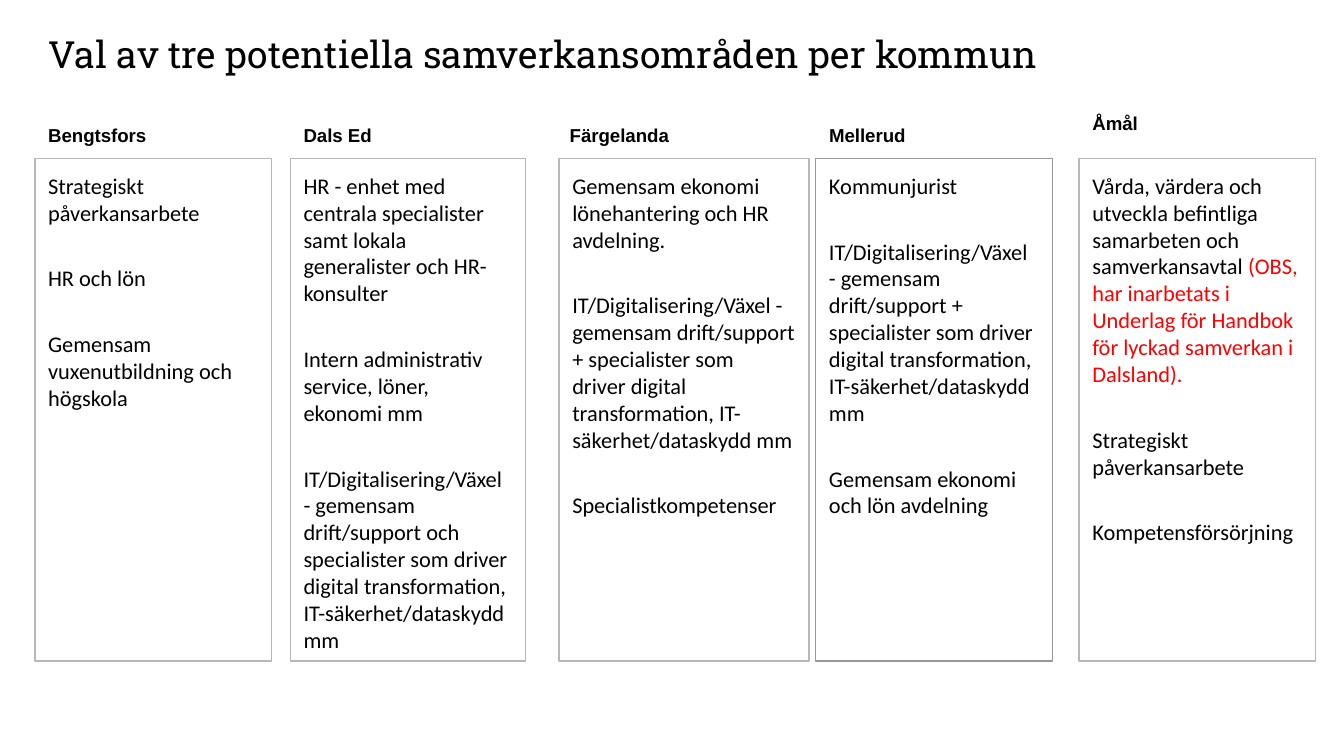
from pptx import Presentation
from pptx.dml.color import RGBColor as RGB
from pptx.enum.shapes import MSO_SHAPE as Shape
from pptx.enum.text import MSO_ANCHOR as Anchor, PP_ALIGN as Align
from pptx.util import Inches, Pt

# Content: a list of paragraphs per municipality; "\n" is a line break,
# and a tuple is (plain text, highlighted text)
TITLE = "Val av tre potentiella samverkansområden per kommun"
IT_SUPPORT = "IT/Digitalisering/Växel - gemensam drift/support "
IT_DRIVER = "digital transformation, IT-säkerhet/dataskydd mm"
COLUMNS = [
    dict(name="Bengtsfors", left=0.26, items=[
        "Strategiskt påverkansarbete",
        "HR och lön",
        "Gemensam vuxenutbildning och högskola"]),
    dict(name="Dals Ed", left=2.16, width=1.75, items=[
        "HR - enhet med centrala specialister samt lokala generalister och HR-konsulter",
        "Intern administrativ service, löner, ekonomi mm",
        IT_SUPPORT + "och specialister som driver " + IT_DRIVER]),
    dict(name="Färgelanda", left=4.16, width=1.86, head_left=4.14, items=[
        "Gemensam ekonomi lönehantering och HR avdelning.",
        IT_SUPPORT + "+ specialister som\ndriver " + IT_DRIVER,
        "Specialistkompetenser"]),
    dict(name="Mellerud", left=6.07, line="rule_dark", items=[
        "Kommunjurist",
        IT_SUPPORT + "+ specialister som driver " + IT_DRIVER,
        "Gemensam ekonomi och lön avdelning"]),
    dict(name="Åmål", left=8.03, head_top=0.75, items=[
        ("Vårda, värdera och utveckla befintliga samarbeten och samverkansavtal ",
         "(OBS, har inarbetats i Underlag för Handbok för lyckad samverkan i Dalsland)."),
        "Strategiskt påverkansarbete",
        "Kompetensförsörjning"]),
]

THEME = dict(
    text=RGB(0x00, 0x00, 0x00), accent=RGB(0xFF, 0x00, 0x00),
    rule=RGB(0xB7, 0xB7, 0xB7), rule_dark=RGB(0x99, 0x99, 0x99),
    title=dict(name="Roboto Slab", size=Pt(20), bold=False),
    heading=dict(name="Arial", size=Pt(10), bold=True),
    body=dict(name="Calibri", size=Pt(12), bold=False),
    item_gap=Pt(20.8), rule_width=Pt(0.75),
)
INSET = 0.1
BOX_TOP, BOX_WIDTH, BOX_HEIGHT = 1.18, 1.76, 3.74
HEAD_TOP, HEAD_WIDTH, HEAD_HEIGHT, HEAD_INSET = 0.84, 1.95, 0.4, 0.12


def set_frame(tf, anchor=Anchor.TOP, inset_y=INSET):
    frame = dict(word_wrap=True, vertical_anchor=anchor,
                 margin_left=Inches(INSET), margin_right=Inches(INSET),
                 margin_top=Inches(inset_y), margin_bottom=Inches(inset_y))
    for key, value in frame.items():
        setattr(tf, key, value)


def add_run(p, text, style, color="text"):
    for i, line in enumerate(text.split("\n")):
        if i:
            p.add_line_break()
        r = p.add_run()
        r.text = line
        for key, value in THEME[style].items():
            setattr(r.font, key, value)
        r.font.color.rgb = THEME[color]


def add_label(s, text, style, box, **frame):
    tf = s.shapes.add_textbox(*map(Inches, box)).text_frame
    set_frame(tf, **frame)
    add_run(tf.paragraphs[0], text, style)


def add_column(s, col):
    # Outlined box with the chosen areas
    sp = s.shapes.add_shape(Shape.RECTANGLE, *map(Inches, (
        col["left"], BOX_TOP, col.get("width", BOX_WIDTH), BOX_HEIGHT)))
    sp.shadow.inherit = False
    sp.fill.background()
    sp.line.color.rgb = THEME[col.get("line", "rule")]
    sp.line.width = THEME["rule_width"]
    tf = sp.text_frame
    set_frame(tf)
    for i, item in enumerate(col["items"]):
        p = tf.add_paragraph() if i else tf.paragraphs[0]
        p.alignment = Align.LEFT
        if i:
            p.space_before = THEME["item_gap"]
        parts = item if isinstance(item, tuple) else (item,)
        for text, color in zip(parts, ("text", "accent")):
            add_run(p, text, "body", color)

    # Municipality name above the box
    add_label(s, col["name"], "heading", (
        col.get("head_left", col["left"]), col.get("head_top", HEAD_TOP),
        HEAD_WIDTH, HEAD_HEIGHT), inset_y=HEAD_INSET)


def main():
    prs = Presentation()
    # Widescreen, 16:9
    prs.slide_width = Inches(10)
    prs.slide_height = prs.slide_width * 9 // 16
    s = prs.slides.add_slide(prs.slide_layouts[6])
    add_label(s, TITLE, "title", (0.26, 0.2, 9.32, 0.4),
              anchor=Anchor.MIDDLE, inset_y=0)
    for col in COLUMNS:
        add_column(s, col)
    prs.save("out.pptx")


if __name__ == "__main__":
    main()
